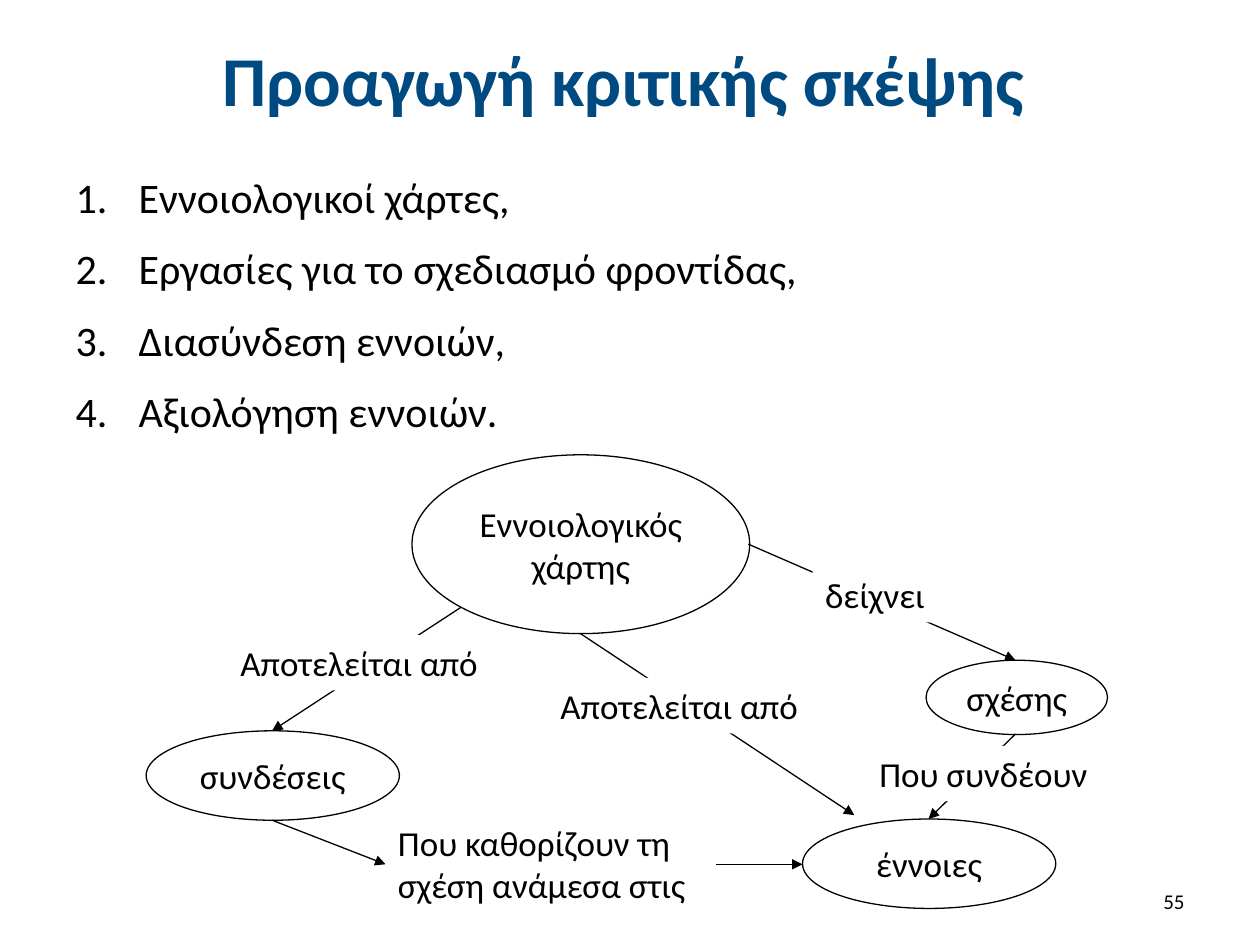
from lxml.etree import SubElement
from pptx import Presentation
from pptx.dml.color import RGBColor
from pptx.enum.shapes import MSO_CONNECTOR, MSO_SHAPE
from pptx.enum.text import MSO_ANCHOR, MSO_AUTO_SIZE, PP_ALIGN
from pptx.oxml.ns import qn
from pptx.util import Pt

COLORS = {"title": "004A82", "text": "000000", "line": "000000", "label": "FFFFFF"}
LINE_WIDTH = Pt(0.75)

TITLE = "Προαγωγή κριτικής σκέψης "
ITEMS = [
    "Εννοιολογικοί χάρτες,",
    "Εργασίες για το σχεδιασμό φροντίδας,",
    "Διασύνδεση εννοιών,",
    "Αξιολόγηση εννοιών.",
]

# Concept map: text with left, top, width, height; arrows with start and end
CONCEPTS = [
    ("Εννοιολογικός χάρτης", 235.4, 259.9, 193, 102.2),
    ("συνδέσεις", 83.5, 417.6, 144.7, 51.1),
    ("έννοιες", 458.6, 468, 144.7, 51.1),
    ("σχέσης", 529.2, 377.3, 103.7, 42.5),
]
ARROWS = [
    (263.5, 347, 155.5, 417.6),
    (155.5, 468.7, 220.3, 493.9),
    (409, 493.9, 458.6, 493.9),
    (427.7, 311, 580.3, 377.3),
    (580.3, 419.4, 530.6, 468),
    (331.9, 362.2, 488.2, 465.8),
]
LABELS = [
    ("Αποτελείται από", 130.3, 362.9, 158.4, 31.7),
    ("Που καθορίζουν τη σχέση ανάμεσα στις", 220.3, 465.8, 188.6, 55.4),
    ("δείχνει", 464.4, 324, 79.2, 31.7),
    ("Που συνδέουν", 495.4, 426.2, 136.8, 31.7),
    ("Αποτελείται από", 313.2, 387.4, 158.4, 31.7),
]


def rgb(name):
    return RGBColor.from_string(COLORS[name])


def place(sp, left, top, width, height):
    box = {"left": left, "top": top, "width": width, "height": height}
    for name, value in box.items():
        setattr(sp, name, Pt(value))


def write(sp, lines, size, align=PP_ALIGN.LEFT, color="text", bold=False,
          anchor=MSO_ANCHOR.TOP):
    tf = sp.text_frame
    frame = {"word_wrap": True, "auto_size": MSO_AUTO_SIZE.NONE,
             "vertical_anchor": anchor}
    for name, value in frame.items():
        setattr(tf, name, value)
    for i, line in enumerate(lines):
        p = tf.paragraphs[0] if i == 0 else tf.add_paragraph()
        p.alignment = align
        r = p.add_run()
        r.text = line
        font = {"name": "Calibri", "size": Pt(size), "bold": bold}
        for name, value in font.items():
            setattr(r.font, name, value)
        r.font.color.rgb = rgb(color)
    return tf


def number_list(tf):
    for p in tf.paragraphs:
        p.space_before = Pt(12)
        pPr = p._p.get_or_add_pPr()
        pPr.set("marL", str(Pt(36)))
        pPr.set("indent", str(-Pt(36)))
        SubElement(pPr, qn("a:buFont"), typeface="+mj-lt")
        SubElement(pPr, qn("a:buAutoNum"), type="arabicPeriod")


def add_concept(s, text, *box):
    sp = s.shapes.add_shape(MSO_SHAPE.OVAL, *map(Pt, box))
    sp.shadow.inherit = False
    sp.fill.background()
    sp.line.color.rgb = rgb("line")
    sp.line.width = LINE_WIDTH
    tf = write(sp, [text], 20, PP_ALIGN.CENTER, anchor=MSO_ANCHOR.MIDDLE)
    tf.margin_left = tf.margin_right = 0


def add_arrow(s, *ends):
    line = s.shapes.add_connector(MSO_CONNECTOR.STRAIGHT, *map(Pt, ends))
    line.line.color.rgb = rgb("line")
    line.line.width = LINE_WIDTH
    SubElement(line.line._get_or_add_ln(), qn("a:tailEnd"), type="triangle")
    SubElement(line._element.spPr, qn("a:effectLst"))


def add_label(s, text, *box):
    sp = s.shapes.add_shape(MSO_SHAPE.RECTANGLE, *map(Pt, box))
    sp.shadow.inherit = False
    sp.fill.solid()
    sp.fill.fore_color.rgb = rgb("label")
    sp.line.fill.background()
    write(sp, [text], 20)


def main():
    prs = Presentation()
    prs.slide_width, prs.slide_height = Pt(720), Pt(540)
    s = prs.slides.add_slide(prs.slide_layouts[1])

    # Title and numbered list
    title, body = s.placeholders
    place(title, 36.7, 9.4, 648, 71.3)
    write(title, [TITLE], 40, PP_ALIGN.CENTER, "title", True, MSO_ANCHOR.MIDDLE)
    place(body, 36, 94.3, 648, 170)
    number_list(write(body, ITEMS, 24))

    # Page number
    number = s.shapes.add_textbox(Pt(516.2), Pt(500.4), Pt(167.8), Pt(28.8))
    write(number, ["55"], 12, PP_ALIGN.RIGHT, anchor=MSO_ANCHOR.MIDDLE)

    # Concept map: labels cover the middle of their arrows
    for concept in CONCEPTS:
        add_concept(s, *concept)
    for arrow in ARROWS:
        add_arrow(s, *arrow)
    for label in LABELS:
        add_label(s, *label)

    prs.save("out.pptx")


if __name__ == "__main__":
    main()
